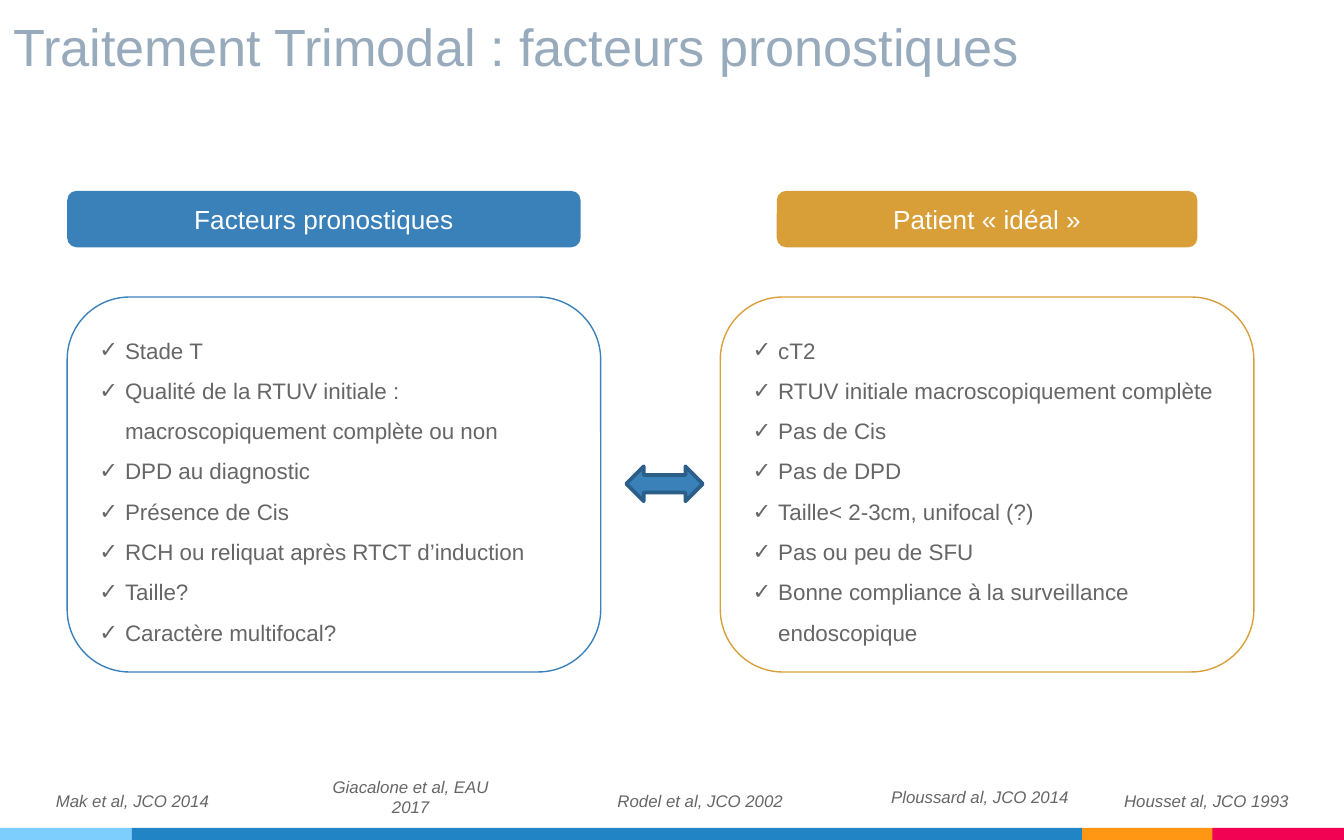
"""Build the slide on prognostic factors of trimodal treatment."""
import dataclasses

import lxml.etree
import pptx
import pptx.dml.color
import pptx.enum.shapes
import pptx.enum.text
import pptx.oxml.ns
import pptx.util

Inches = pptx.util.Inches
Shapes = pptx.enum.shapes.MSO_SHAPE
Align = pptx.enum.text.PP_ALIGN
Anchor = pptx.enum.text.MSO_ANCHOR
AutoSize = pptx.enum.text.MSO_AUTO_SIZE

FONT = "Arial"
BLUE, GOLD, GREY = "3A81BA", "D89F39", "666666"
PANEL_TOP, PANEL_WIDTH, PANEL_HEIGHT = 2.21, 3.97, 2.79
HEADER_TOP, HEADER_HEIGHT = 1.42, 0.42
STRIPE_TOP, STRIPE_HEIGHT = 6.16, 0.09


@dataclasses.dataclass
class Stripe:
    left: float
    width: float
    color: str


@dataclasses.dataclass
class Column:
    heading: str
    header_left: float
    header_width: float
    panel_left: float
    color: str
    items: list[str]


@dataclasses.dataclass
class Citation:
    text: str
    left: float
    top: float
    width: float


STRIPES = [
    Stripe(8.05, 0.98, "FF9715"),
    Stripe(9.02, 0.98, "F20253"),
    Stripe(0, 0.98, "7ECEFD"),
    Stripe(0.98, 7.07, "2185C5"),
]
COLUMNS = [
    Column("Facteurs pronostiques", 0.5, 3.82, 0.5, BLUE, [
        "Stade T",
        "Qualité de la RTUV initiale : macroscopiquement complète ou non",
        "DPD au diagnostic",
        "Présence de Cis",
        "RCH ou reliquat après RTCT d’induction",
        "Taille?",
        "Caractère multifocal?",
    ]),
    Column("Patient « idéal »", 5.78, 3.13, 5.36, GOLD, [
        "cT2",
        "RTUV initiale macroscopiquement complète",
        "Pas de Cis",
        "Pas de DPD",
        "Taille< 2-3cm, unifocal (?)",
        "Pas ou peu de SFU",
        "Bonne compliance à la surveillance endoscopique",
    ]),
]
CITATIONS = [
    Citation("Mak et al, JCO 2014", 0.35, 5.83, 1.27),
    Citation("Giacalone et al, EAU 2017", 2.26, 5.8, 1.59),
    Citation("Rodel et al, JCO 2002", 4.53, 5.83, 1.36),
    Citation("Housset al, JCO 1993", 8.3, 5.83, 1.35),
    Citation("Ploussard al, JCO 2014", 6.57, 5.8, 1.44),
]


def rgb(color: str) -> pptx.dml.color.RGBColor:
    return pptx.dml.color.RGBColor.from_string(color)


def place(box, left: float, top: float, width: float, height: float) -> None:
    box.left, box.top = Inches(left), Inches(top)
    box.width, box.height = Inches(width), Inches(height)


def set_frame(box, anchor, side: float, edge: float, wrap: bool = True):
    frame = box.text_frame
    frame.auto_size = AutoSize.NONE
    frame.word_wrap = wrap
    frame.vertical_anchor = anchor
    frame.margin_left = frame.margin_right = Inches(side)
    frame.margin_top = frame.margin_bottom = Inches(edge)
    return frame


def add_span(para, text: str, size: float, color: str, italic: bool = False) -> None:
    span = para.add_run()
    span.text = text
    span.font.name = FONT
    span.font.size = pptx.util.Pt(size)
    span.font.italic = italic
    span.font.color.rgb = rgb(color)


def add_block(slide, kind, left: float, top: float, width: float, height: float,
              fill: str = "", line: str = "", weight: float = 0.75):
    block = slide.shapes.add_shape(kind, Inches(left), Inches(top), Inches(width), Inches(height))
    block.shadow.inherit = False
    if fill:
        block.fill.solid()
        block.fill.fore_color.rgb = rgb(fill)
    else:
        block.fill.background()
    if line:
        block.line.color.rgb = rgb(line)
        block.line.width = pptx.util.Pt(weight)
    else:
        block.line.fill.background()
    return block


def set_check_bullet(para) -> None:
    properties = para._p.get_or_add_pPr()
    indent = Inches(0.19)
    properties.set("marL", str(indent))
    properties.set("indent", str(-indent))
    font = lxml.etree.SubElement(properties, pptx.oxml.ns.qn("a:buFont"))
    font.set("typeface", FONT)
    bullet = lxml.etree.SubElement(properties, pptx.oxml.ns.qn("a:buChar"))
    bullet.set("char", "✓")


def add_column(slide, column: Column, body) -> None:
    header = add_block(slide, Shapes.ROUNDED_RECTANGLE, column.header_left, HEADER_TOP,
                       column.header_width, HEADER_HEIGHT, fill=column.color)
    para = set_frame(header, Anchor.MIDDLE, 0.1, 0.05).paragraphs[0]
    para.alignment = Align.CENTER
    add_span(para, column.heading, 14, "FFFFFF")

    panel = (column.panel_left, PANEL_TOP, PANEL_WIDTH, PANEL_HEIGHT)
    add_block(slide, Shapes.ROUNDED_RECTANGLE, *panel, line=column.color)
    place(body, *panel)
    frame = set_frame(body, Anchor.MIDDLE, 0.24, 0.05)
    for index, item in enumerate(column.items):
        para = frame.add_paragraph() if index else frame.paragraphs[0]
        para.line_spacing = 1.5
        para.space_before = pptx.util.Pt(0)
        set_check_bullet(para)
        add_span(para, item, 12, GREY)


def add_citation(slide, citation: Citation) -> None:
    box = slide.shapes.add_textbox(Inches(citation.left), Inches(citation.top),
                                   Inches(citation.width), Inches(0.26))
    frame = set_frame(box, Anchor.MIDDLE, 0.06, 0.06, wrap=False)
    frame.auto_size = AutoSize.SHAPE_TO_FIT_TEXT
    para = frame.paragraphs[0]
    para.alignment = Align.CENTER
    add_span(para, citation.text, 9, GREY, italic=True)


def main() -> None:
    deck = pptx.Presentation()
    deck.slide_width, deck.slide_height = Inches(10), Inches(6.25)
    slide = deck.slides.add_slide(deck.slide_layouts.get_by_name("Two Content"))
    title, *bodies = slide.placeholders

    for stripe in STRIPES:
        add_block(slide, Shapes.RECTANGLE, stripe.left, STRIPE_TOP,
                  stripe.width, STRIPE_HEIGHT, fill=stripe.color)

    place(title, 0, 0, 10, 0.67)
    para = set_frame(title, Anchor.BOTTOM, 0.1, 0.1).paragraphs[0]
    para.alignment = Align.LEFT
    add_span(para, "Traitement Trimodal : facteurs pronostiques", 28, "97ABBC")

    for column, body in zip(COLUMNS, bodies):
        add_column(slide, column, body)
    for citation in CITATIONS:
        add_citation(slide, citation)
    add_block(slide, Shapes.LEFT_RIGHT_ARROW, 4.66, 3.47, 0.57, 0.26,
              fill=BLUE, line="2B5F8A", weight=2)
    deck.save("out.pptx")


if __name__ == "__main__":
    main()
